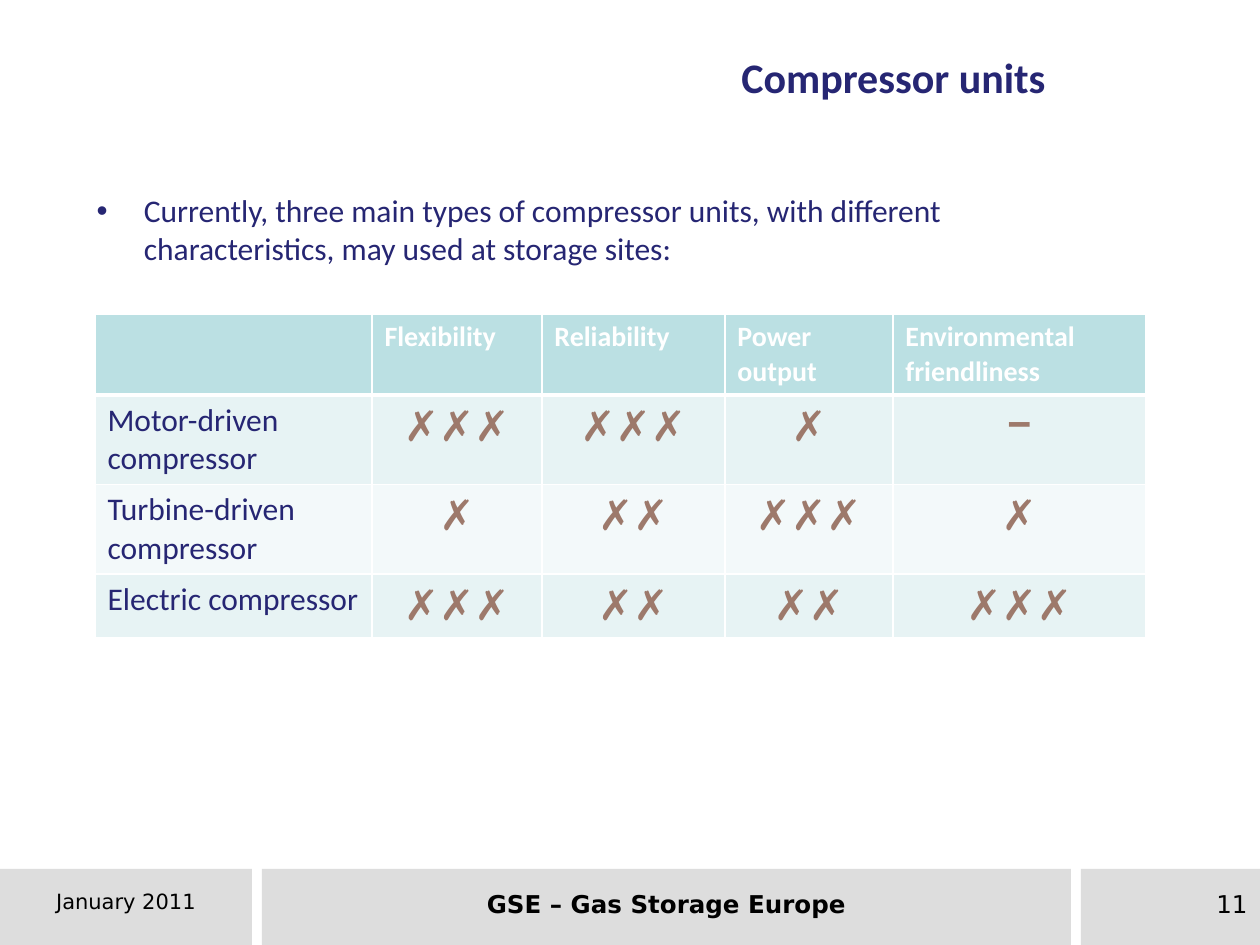
from dataclasses import dataclass
from typing import NamedTuple

from pptx import Presentation
from pptx import util as u
from pptx.dml.color import RGBColor
from pptx.enum import shapes, text
from pptx.oxml.xmlchemy import OxmlElement

PX_PER_INCH = 126


def px(length: int) -> u.Emu:
    return u.Emu(round(length * 914400 / PX_PER_INCH))


@dataclass(frozen=True)
class Theme:
    navy: str = "262673"
    brown: str = "9D796B"
    white: str = "FFFFFF"
    black: str = "000000"
    footer_fill: str = "DDDDDD"
    header_fill: str = "BBE0E3"
    row_fills: tuple[str, str] = ("E7F3F4", "F3F9FA")
    main_font: str = "Calibri"
    footer_font: str = "DejaVu Sans"
    dash_font: str = "Karla"
    title_size: int = 24
    body_size: int = 18
    header_size: int = 16
    footer_size: int = 14
    date_size: int = 12


THEME = Theme()
LEFT, CENTER, RIGHT = text.PP_ALIGN.LEFT, text.PP_ALIGN.CENTER, text.PP_ALIGN.RIGHT


class Box(NamedTuple):
    left: int
    top: int
    width: int
    height: int

    def emu(self) -> list[u.Emu]:
        return [px(side) for side in self]


class Style(NamedTuple):
    size: int
    color: str
    bold: bool = False
    align: text.PP_ALIGN = LEFT
    font: str = THEME.main_font


class FooterPart(NamedTuple):
    left: int
    width: int
    label: str
    style: Style


class UnitType(NamedTuple):
    label: str
    height: int
    ratings: tuple[str, ...]


TITLE = Style(THEME.title_size, THEME.navy, True, CENTER)
BODY = Style(THEME.body_size, THEME.navy)
HEADER = Style(THEME.header_size, THEME.white, True)
RATING = Style(THEME.title_size, THEME.brown, True, CENTER)
DASH = RATING._replace(font=THEME.dash_font)
FOOTER = Style(THEME.footer_size, THEME.black, font=THEME.footer_font)

FOOTER_TOP, FOOTER_HEIGHT, FOOTER_INSET = 869, 76, 20
FOOTER_PARTS = [
    FooterPart(0, 252, "January 2011", FOOTER._replace(size=THEME.date_size, align=CENTER)),
    FooterPart(262, 809, "GSE – Gas Storage Europe", FOOTER._replace(bold=True, align=CENTER)),
    FooterPart(1081, 179, "11", FOOTER._replace(align=RIGHT)),
]

TABLE_LEFT, TABLE_TOP, HEADER_HEIGHT = 95, 314, 79
COLUMN_WIDTHS = [277, 170, 183, 168, 253]
HEADINGS = ["", "Flexibility", "Reliability", "Power output", "Environmental friendliness"]
UNIT_TYPES = [
    UnitType("Motor-driven compressor", 89, ("✗✗✗", "✗✗✗", "✗", "‒")),
    UnitType("Turbine-driven compressor", 89, ("✗", "✗✗", "✗✗✗", "✗")),
    UnitType("Electric compressor", 62, ("✗✗✗", "✗✗", "✗✗", "✗✗✗")),
]


def write(frame, wording: str, style: Style) -> None:
    frame.text = wording
    paragraph = frame.paragraphs[0]
    paragraph.alignment = style.align
    for run in paragraph.runs:
        run.font.name = style.font
        run.font.size = u.Pt(style.size)
        run.font.bold = style.bold
        run.font.color.rgb = RGBColor.from_string(style.color)


def fill_placeholder(placeholder, box: Box, wording: str, style: Style) -> None:
    placeholder.left, placeholder.top, placeholder.width, placeholder.height = box.emu()
    frame = placeholder.text_frame
    frame.word_wrap = True
    frame.auto_size = text.MSO_AUTO_SIZE.NONE
    frame.vertical_anchor = text.MSO_ANCHOR.TOP
    properties = frame.paragraphs[0]._p.get_or_add_pPr()
    properties.set("marL", "0")
    properties.set("indent", "0")
    properties.append(OxmlElement("a:buNone"))
    write(frame, wording, style)
    frame.paragraphs[0].space_before = u.Pt(0)


def draw_footer(slide, part: FooterPart) -> None:
    box = Box(part.left, FOOTER_TOP, part.width, FOOTER_HEIGHT)
    panel = slide.shapes.add_shape(shapes.MSO_SHAPE.RECTANGLE, *box.emu())
    panel.shadow.inherit = False
    panel.fill.solid()
    panel.fill.fore_color.rgb = RGBColor.from_string(THEME.footer_fill)
    panel.line.fill.background()
    frame = panel.text_frame
    frame.vertical_anchor = text.MSO_ANCHOR.TOP
    frame.margin_top = px(FOOTER_INSET)
    write(frame, part.label, part.style)


def add_borders(cell, top: int, bottom: int) -> None:
    properties = cell._tc.get_or_add_tcPr()
    widths = {"a:lnL": 1, "a:lnR": 1, "a:lnT": top, "a:lnB": bottom}
    for position, (side, width) in enumerate(widths.items()):
        line = OxmlElement(side)
        line.set("w", str(u.Pt(width)))
        fill = OxmlElement("a:solidFill")
        color = OxmlElement("a:srgbClr")
        color.set("val", THEME.white)
        fill.append(color)
        line.append(fill)
        properties.insert(position, line)


def fill_cell(cell, wording: str, style: Style, fill: str, top: int = 1, bottom: int = 1) -> None:
    cell.fill.solid()
    cell.fill.fore_color.rgb = RGBColor.from_string(fill)
    add_borders(cell, top, bottom)
    if wording:
        write(cell.text_frame, wording, style)


def draw_ratings(slide) -> None:
    heights = [HEADER_HEIGHT] + [unit.height for unit in UNIT_TYPES]
    box = Box(TABLE_LEFT, TABLE_TOP, sum(COLUMN_WIDTHS), sum(heights))
    table = slide.shapes.add_table(len(heights), len(COLUMN_WIDTHS), *box.emu()).table
    for column, width in zip(table.columns, COLUMN_WIDTHS):
        column.width = px(width)
    for row, height in zip(table.rows, heights):
        row.height = px(height)

    for column, heading in enumerate(HEADINGS):
        fill_cell(table.cell(0, column), heading, HEADER, THEME.header_fill, bottom=3)
    for row, unit in enumerate(UNIT_TYPES, start=1):
        fill = THEME.row_fills[(row - 1) % 2]
        top = 3 if row == 1 else 1
        fill_cell(table.cell(row, 0), unit.label, BODY, fill, top)
        for column, rating in enumerate(unit.ratings, start=1):
            style = DASH if rating == "‒" else RATING
            fill_cell(table.cell(row, column), rating, style, fill, top)


def main() -> None:
    deck = Presentation()
    deck.slide_width, deck.slide_height = px(1260), px(945)
    slide = deck.slides.add_slide(deck.slide_layouts[1])

    # Title and introduction
    fill_placeholder(slide.shapes.title, Box(591, 45, 605, 64), "Compressor units", TITLE)
    fill_placeholder(
        slide.placeholders[1],
        Box(84, 185, 1042, 89),
        "Currently, three main types of compressor units, with different "
        "characteristics, may used at storage sites:",
        BODY,
    )

    # Comparison of the unit types
    draw_ratings(slide)

    # Footer band
    for part in FOOTER_PARTS:
        draw_footer(slide, part)

    deck.save("out.pptx")


if __name__ == "__main__":
    main()
